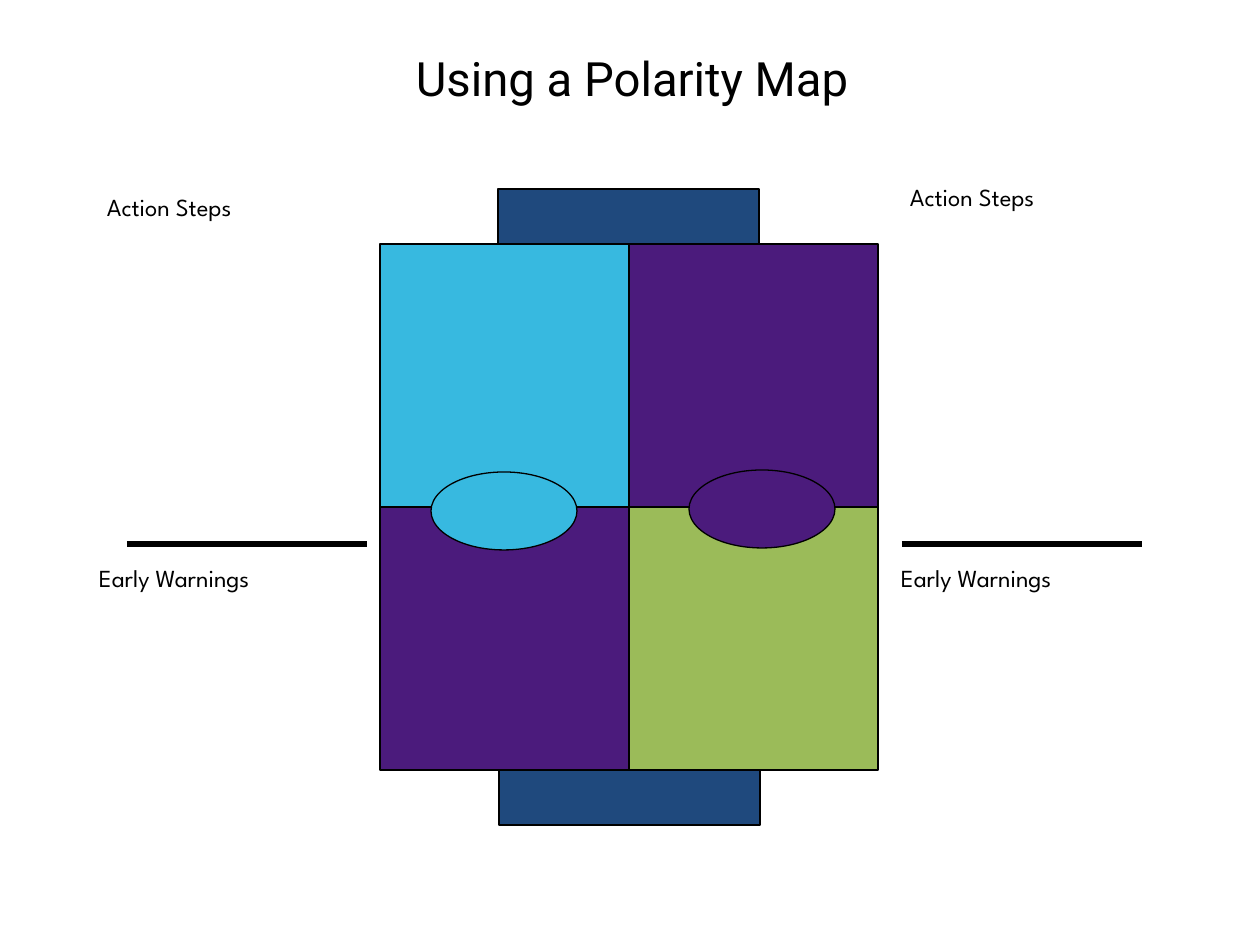
from lxml.etree import SubElement
from pptx import Presentation
from pptx.dml.color import RGBColor
from pptx.enum.shapes import MSO_CONNECTOR, MSO_SHAPE
from pptx.enum.text import MSO_ANCHOR, MSO_AUTO_SIZE, PP_ALIGN
from pptx.oxml.ns import qn
from pptx.util import Emu, Pt

SCALE = 914400 / 126
BLACK, CYAN, PURPLE, GREEN, NAVY = "000000", "37B9E0", "4B1B7C", "9BBB59", "1F497D"


def px(*lengths):
    """Turn pixel lengths into a list of EMU."""
    return [Emu(round(n * SCALE)) for n in lengths]


def rgb(code):
    return RGBColor.from_string(code)


prs = Presentation()
prs.slide_width, prs.slide_height = px(1260, 945)
slide = prs.slides.add_slide(prs.slide_layouts[5])
shapes = slide.shapes

# Title
title = shapes.title
title.left, title.top, title.width, title.height = px(73, 40, 1124, 76)
tf = title.text_frame
tf.text = "Using a Polarity Map"
tf.auto_size = MSO_AUTO_SIZE.NONE
tf.vertical_anchor = MSO_ANCHOR.MIDDLE
tf.margin_left, tf.margin_right = px(5, 11)
p = tf.paragraphs[0]
p.alignment = PP_ALIGN.CENTER
p.space_before = Pt(0)
p.font.name, p.font.size, p.font.color.rgb = "Roboto", Pt(27), rgb(BLACK)

# Rules between the action steps and the early warnings
RULE_Y, RULE_W = 544, 240
for x in (127, 902):
    line = shapes.add_connector(MSO_CONNECTOR.STRAIGHT, *px(x, RULE_Y, x + RULE_W, RULE_Y))
    line.line.color.rgb, line.line.width = rgb(BLACK), Pt(3)
    SubElement(line._element.spPr, qn("a:effectLst"))

# Side labels
for text, x, y in (
    ("Action Steps", 107, 193),
    ("Action Steps", 910, 183),
    ("Early Warnings", 99, 564),
    ("Early Warnings", 901, 564),
):
    tf = shapes.add_textbox(*px(x, y, 280, 28)).text_frame
    tf.word_wrap = True
    tf.margin_left = tf.margin_top = tf.margin_right = tf.margin_bottom = 0
    p = tf.paragraphs[0]
    p.text = text
    p.line_spacing = Pt(16.1)
    p.font.name, p.font.size, p.font.color.rgb = "League Spartan", Pt(14), rgb(BLACK)

# Polarity map: four quadrants, two pole bars, two ovals
MAP_X, MAP_Y, QUAD_W, QUAD_H = 380, 244, 249, 263
BAR_W, BAR_H = 261, 55
OVAL_W, OVAL_H = 146, 78
RECT, OVAL = MSO_SHAPE.RECTANGLE, MSO_SHAPE.OVAL

blocks = [
    (RECT, MAP_X + col * QUAD_W, MAP_Y + row * QUAD_H, QUAD_W, QUAD_H, color)
    for row, colors in enumerate([(CYAN, PURPLE), (PURPLE, GREEN)])
    for col, color in enumerate(colors)
]
blocks += [
    (RECT, 498, MAP_Y - BAR_H, BAR_W, BAR_H, NAVY),
    (RECT, 499, MAP_Y + 2 * QUAD_H, BAR_W, BAR_H, NAVY),
    (OVAL, 431, 472, OVAL_W, OVAL_H, CYAN),
    (OVAL, 689, 470, OVAL_W, OVAL_H, PURPLE),
]
for kind, x, y, w, h, color in blocks:
    sp = shapes.add_shape(kind, *px(x, y, w, h))
    sp.shadow.inherit = False
    sp.fill.solid()
    sp.fill.fore_color.rgb = rgb(color)
    sp.line.color.rgb, sp.line.width = rgb(BLACK), Pt(0.75)

prs.save("out.pptx")
